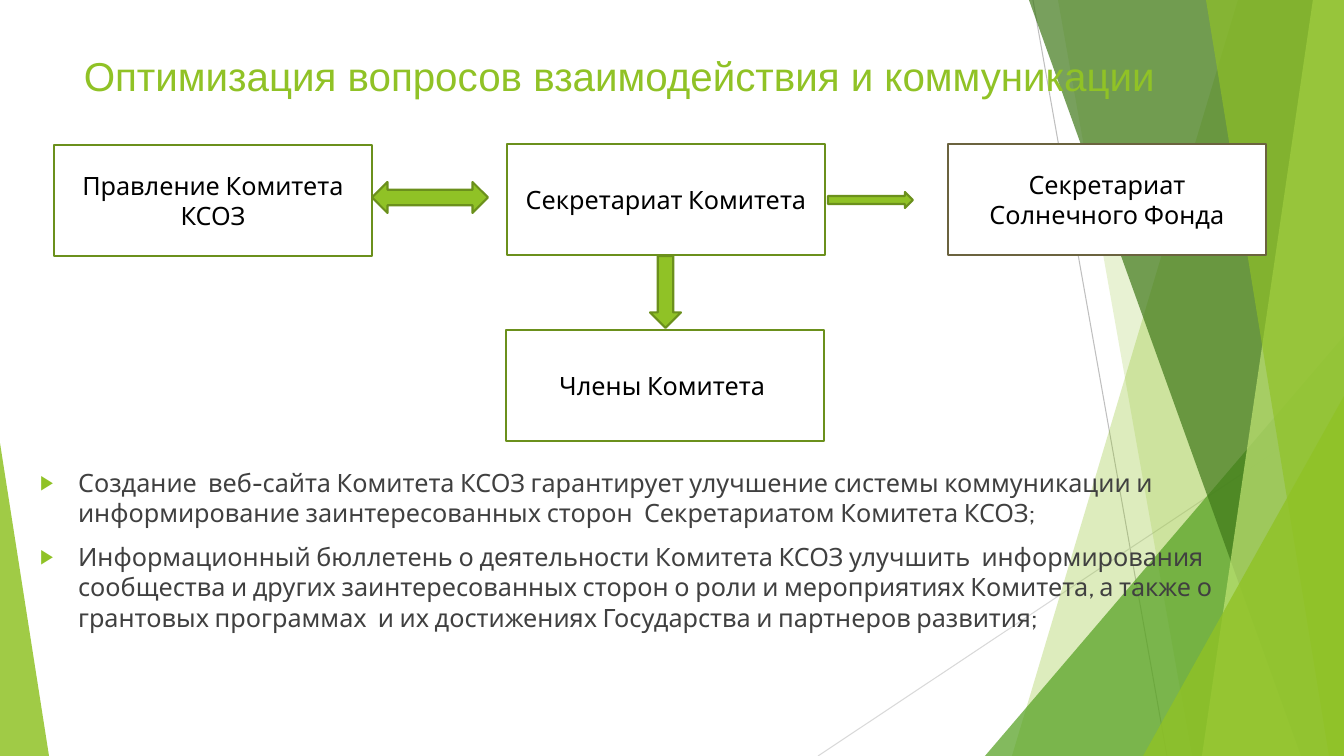
from collections import namedtuple

from lxml import etree
from pptx import Presentation
from pptx.dml.color import RGBColor
from pptx.enum.dml import MSO_THEME_COLOR
from pptx.enum.shapes import MSO_CONNECTOR, MSO_SHAPE
from pptx.enum.text import MSO_ANCHOR, MSO_AUTO_SIZE, PP_ALIGN
from pptx.oxml.ns import qn
from pptx.util import Pt

RECTANGLE = MSO_SHAPE.RECTANGLE
TRIANGLE = MSO_SHAPE.ISOSCELES_TRIANGLE
BOTH_WAYS = MSO_SHAPE.LEFT_RIGHT_ARROW
RIGHTWARD = MSO_SHAPE.RIGHT_ARROW
DOWNWARD = MSO_SHAPE.DOWN_ARROW
STRAIGHT = MSO_CONNECTOR.STRAIGHT
LEFT, CENTER = PP_ALIGN.LEFT, PP_ALIGN.CENTER
TOP, MIDDLE = MSO_ANCHOR.TOP, MSO_ANCHOR.MIDDLE
FIXED_SIZE = MSO_AUTO_SIZE.NONE
PAGE_COLOR = MSO_THEME_COLOR.BACKGROUND_1

EMU_PER_PX = 914400 / 100.8
Box = namedtuple("Box", "left top width height")


class Theme:
    green, leaf, forest, lime = "90C226", "54A021", "3F7819", "C0E474"
    outline, outline_brown = "6B901C", "6B633F"
    white, black, body = "FFFFFF", "000000", "404040"
    ray, pale_ray = "BFBFBF", "D9D9D9"
    title_font, text_font = "Arial", "Cabin"
    title_size, title_lead_size, text_size = 28.8, 21.6, 18
    outline_width, ray_width = 1.5, 0.75


def px(length):
    return round(length * EMU_PER_PX)


def place(shape, box):
    shape.left, shape.top, shape.width, shape.height = map(px, box)


def paint(shape, fill, line=None, opacity=100):
    shape.shadow.inherit = False
    shape.fill.solid()
    shape.fill.fore_color.rgb = RGBColor.from_string(fill)
    if opacity < 100:
        color = shape.fill._xPr.find(qn("a:solidFill"))[0]
        etree.SubElement(color, qn("a:alpha")).set("val", str(opacity * 1000))
    if line:
        shape.line.color.rgb = RGBColor.from_string(line)
        shape.line.width = Pt(Theme.outline_width)
    else:
        shape.line.fill.background()


def write(para, text, size=Theme.text_size, font=Theme.text_font,
          color=Theme.black, align=LEFT):
    para.alignment = align
    span = para.add_run()
    span.text = text
    span.font.size = Pt(size)
    span.font.name = font
    span.font.color.rgb = RGBColor.from_string(color)


def add_preset(page, kind, box, fill, **style):
    shape = page.shapes.add_shape(kind, *map(px, box))
    paint(shape, fill, **style)
    return shape


def add_backdrop(page, box):
    def ray(start, end, color):
        points = [px(box.left + start[0]), px(box.top + start[1]),
                  px(box.left + end[0]), px(box.top + end[1])]
        line = page.shapes.add_connector(STRAIGHT, *points)
        line.line.color.rgb = RGBColor.from_string(color)
        line.line.width = Pt(Theme.ray_width)
        etree.SubElement(line._element.spPr, qn("a:effectLst"))

    def band(top_x, bottom_x, color, opacity):
        """A slanted band that runs to the right edge."""
        right, bottom = box.left + box.width, box.top + box.height
        outline = page.shapes.build_freeform(
            box.left + top_x, box.top, scale=EMU_PER_PX)
        outline.add_line_segments(
            [(right, box.top), (right, bottom), (box.left + bottom_x, bottom)])
        paint(outline.convert_to_shape(), color, opacity=opacity)

    def corner(left, width, height, apex, color, opacity):
        """A triangle that stands on the bottom edge."""
        area = Box(box.left + left, box.top + box.height - height, width, height)
        shape = add_preset(page, TRIANGLE, area, color, opacity=opacity)
        shape.adjustments[0] = apex

    ray((1033, 0), (1167, 756), Theme.ray)
    ray((1344, 406), (818, 756), Theme.pale_ray)
    band(1238, 1012, Theme.green, 30)
    band(1058, 1192, Theme.green, 20)
    corner(985, 359, 420, 1, Theme.leaf, 72)
    band(1029, 1301, Theme.forest, 70)
    band(1313, 1202, Theme.lime, 70)
    band(1206, 1329, Theme.green, 65)
    corner(1143, 201, 360, 1, Theme.green, 80)
    corner(0, 49, 313, 0, Theme.green, 85)


def open_placeholder(page, holder, box):
    """Moves a placeholder to its box, in front of the backdrop."""
    place(holder, box)
    page.shapes._spTree.append(holder._element)
    frame = holder.text_frame
    frame.auto_size = FIXED_SIZE
    frame.vertical_anchor = TOP
    return frame


def add_title(page, box, text):
    para = open_placeholder(page, page.shapes.title, box).paragraphs[0]
    write(para, " ", size=Theme.title_lead_size, color=Theme.green)
    write(para, text, size=Theme.title_size, font=Theme.title_font,
          color=Theme.green)


def add_bullet(para, indent):
    properties = para._p.get_or_add_pPr()
    properties.set("marL", str(px(indent)))
    properties.set("indent", str(-px(indent)))
    color = etree.SubElement(properties, qn("a:buClr"))
    etree.SubElement(color, qn("a:srgbClr")).set("val", Theme.green)
    etree.SubElement(properties, qn("a:buSzPct")).set("val", "80000")
    etree.SubElement(properties, qn("a:buFont")).set("typeface", "Arial")
    etree.SubElement(properties, qn("a:buChar")).set("char", "▶")


def add_list(page, box, items):
    frame = open_placeholder(page, page.placeholders[1], box)
    for index, item in enumerate(items):
        para = frame.add_paragraph() if index else frame.paragraphs[0]
        para.space_before = Pt(10)
        write(para, item, color=Theme.body)
        add_bullet(para, indent=38)


def add_flow(page, box):
    nodes = [
        (0, 1, "Правление Комитета КСОЗ", Theme.outline),
        (453, 0, "Секретариат Комитета", Theme.outline),
        (894, 0, "Секретариат Солнечного Фонда", Theme.outline_brown),
        (452, 186, "Члены Комитета ", Theme.outline),
    ]
    arrows = [
        (BOTH_WAYS, 318, 38, 116, 31),
        (RIGHTWARD, 774, 48, 85, 16),
        (DOWNWARD, 596, 112, 31, 72),
    ]
    for left, top, text, line in nodes:
        area = Box(box.left + left, box.top + top, 318, 111)
        node = add_preset(page, RECTANGLE, area, Theme.white, line=line)
        frame = node.text_frame
        frame.word_wrap = True
        frame.vertical_anchor = MIDDLE
        write(frame.paragraphs[0], text, align=CENTER)
    for kind, left, top, width, height in arrows:
        area = Box(box.left + left, box.top + top, width, height)
        add_preset(page, kind, area, Theme.green, line=Theme.outline)


def main():
    deck = Presentation()
    deck.slide_width, deck.slide_height = px(1344), px(756)
    page = deck.slides.add_slide(deck.slide_layouts[1])
    page.background.fill.solid()
    page.background.fill.fore_color.theme_color = PAGE_COLOR

    add_backdrop(page, Box(0, 0, 1344, 756))
    add_title(page, Box(67, 46, 1210, 96),
              "Оптимизация вопросов взаимодействия и коммуникации")
    add_list(page, Box(30, 462, 1256, 290), [
        "Создание  веб-сайта Комитета КСОЗ гарантирует улучшение системы "
        "коммуникации и информирование заинтересованных сторон  "
        "Секретариатом Комитета КСОЗ;",
        "Информационный бюллетень о деятельности Комитета КСОЗ улучшить  "
        "информирования сообщества и других заинтересованных сторон о роли "
        "и мероприятиях Комитета, а также о грантовых программах  и их "
        "достижениях Государства и партнеров развития;",
    ])
    add_flow(page, Box(54, 144, 1212, 298))
    deck.save("out.pptx")


if __name__ == "__main__":
    main()
